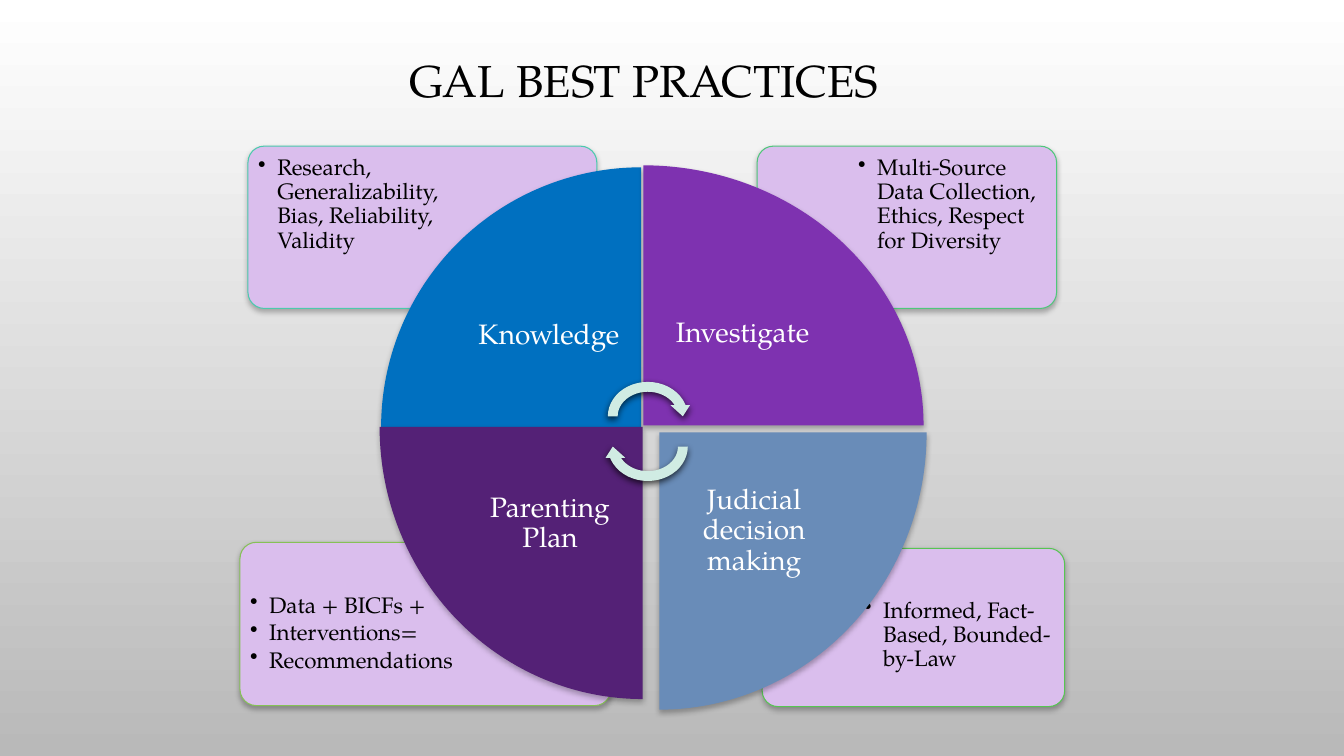
import pptx
import pptx.util
import pptx.dml.color
import pptx.enum.shapes
import pptx.enum.text
import lxml.etree

PX = 9144
FONT = "TeX Gyre Pagella"
NS = "http://schemas.openxmlformats.org/drawingml/2006/main"
KIND = pptx.enum.shapes.MSO_SHAPE
ALIGN = pptx.enum.text.PP_ALIGN
ANCHOR = pptx.enum.text.MSO_ANCHOR
color = pptx.dml.color.RGBColor.from_string

deck = pptx.Presentation()
deck.slide_width = 1333 * PX
deck.slide_height = 750 * PX
slide = deck.slides.add_slide(deck.slide_layouts[6])
back = slide.background.fill
back.gradient()
back.gradient_angle = 270
for stop, shade in zip(back.gradient_stops, ("FFFFFF", "B9B9B9")):
    stop.color.rgb = color(shade)


def add_form(kind, box, fill, line=None, turn=0, dark=28, blur=4):
    form = slide.shapes.add_shape(kind, *[v * PX for v in box])
    form.rotation = turn
    form.fill.solid()
    form.fill.fore_color.rgb = color(fill)
    if line:
        form.line.color.rgb = color(line)
        form.line.width = pptx.util.Pt(0.75)
    else:
        form.line.fill.background()
    form.shadow.inherit = False
    effects = form._element.spPr.find(f"{{{NS}}}effectLst")
    effects.append(lxml.etree.fromstring(
        f'<a:outerShdw xmlns:a="{NS}" blurRad="{blur * 12700}" dist="25400" '
        f'dir="5400000" rotWithShape="0"><a:srgbClr val="000000">'
        f'<a:alpha val="{dark * 1000}"/></a:srgbClr></a:outerShdw>'))
    return form


def add_text(box, text, size, ink, pad, list_gap=None):
    frame = slide.shapes.add_textbox(*[v * PX for v in box]).text_frame
    frame.word_wrap = True
    frame.margin_left = frame.margin_right = pad[0] * PX
    frame.margin_top = frame.margin_bottom = pad[1] * PX
    frame.vertical_anchor = ANCHOR.TOP if list_gap else ANCHOR.MIDDLE
    frame.text = text
    for para in frame.paragraphs:
        para.line_spacing = 0.9
        if list_gap:
            para.alignment = ALIGN.LEFT
            para.space_after = pptx.util.Pt(list_gap)
            props = para._p.get_or_add_pPr()
            props.set("marL", str(19 * PX))
            props.set("indent", str(-19 * PX))
            lxml.etree.SubElement(props, f"{{{NS}}}buChar").set("char", "•")
        else:
            para.alignment = ALIGN.CENTER
        for run in para.runs:
            run.font.size = pptx.util.Pt(size)
            run.font.name = FONT
            run.font.color.rgb = color(ink)


add_text((40, 35, 1198, 95), "GAL BEST PRACTICES", 32, "000000", (10, 5))

cards = [
    ((756, 544, 300, 157), "57C453", (850, 587, 203, 111),
     "Informed, Fact-Based, Bounded-by-Law"),
    ((238, 538, 368, 162), "86C157", (241, 582, 251, 114),
     "Data + BICFs +\nInterventions=\nRecommendations"),
    ((751, 145, 297, 161), "4FC77B", (844, 148, 201, 114),
     "Multi-Source Data Collection, Ethics, Respect for Diversity"),
    ((246, 145, 346, 161), "4BCAAD", (249, 148, 235, 114),
     "Research, Generalizability, Bias, Reliability, Validity"),
]
for box, line, text_box, text in cards:
    card = add_form(KIND.ROUNDED_RECTANGLE, box, "DABEED", line)
    card.adjustments[0] = 0.1
    add_text(text_box, text, 16, "000000", (7, 7), 2.4)

wedges = [
    ((378, 166, 258, 258), "0070C0", (453, 241, 183, 183), "Knowledge"),
    ((648, 154, 258, 278), "7E32B0", (638, 239, 197, 183), "Investigate"),
    ((654, 429, 265, 275), "698CB8", (654, 429, 188, 195),
     "Judicial decision making"),
    ((372, 428, 270, 261), "542176", (453, 424, 185, 191), "Parenting Plan"),
]
for i, (box, fill, text_box, text) in enumerate(wedges):
    add_form(KIND.PIE_WEDGE, box, fill, turn=90 * i)
    add_text(text_box, text, 20, "FFFFFF", (16, 16))

for top, turn in ((374, 0), (404, 180)):
    add_form(KIND.CIRCULAR_ARROW, (598, top, 89, 78), "D0ECE3",
             turn=turn, dark=69, blur=5)

deck.save("out.pptx")
